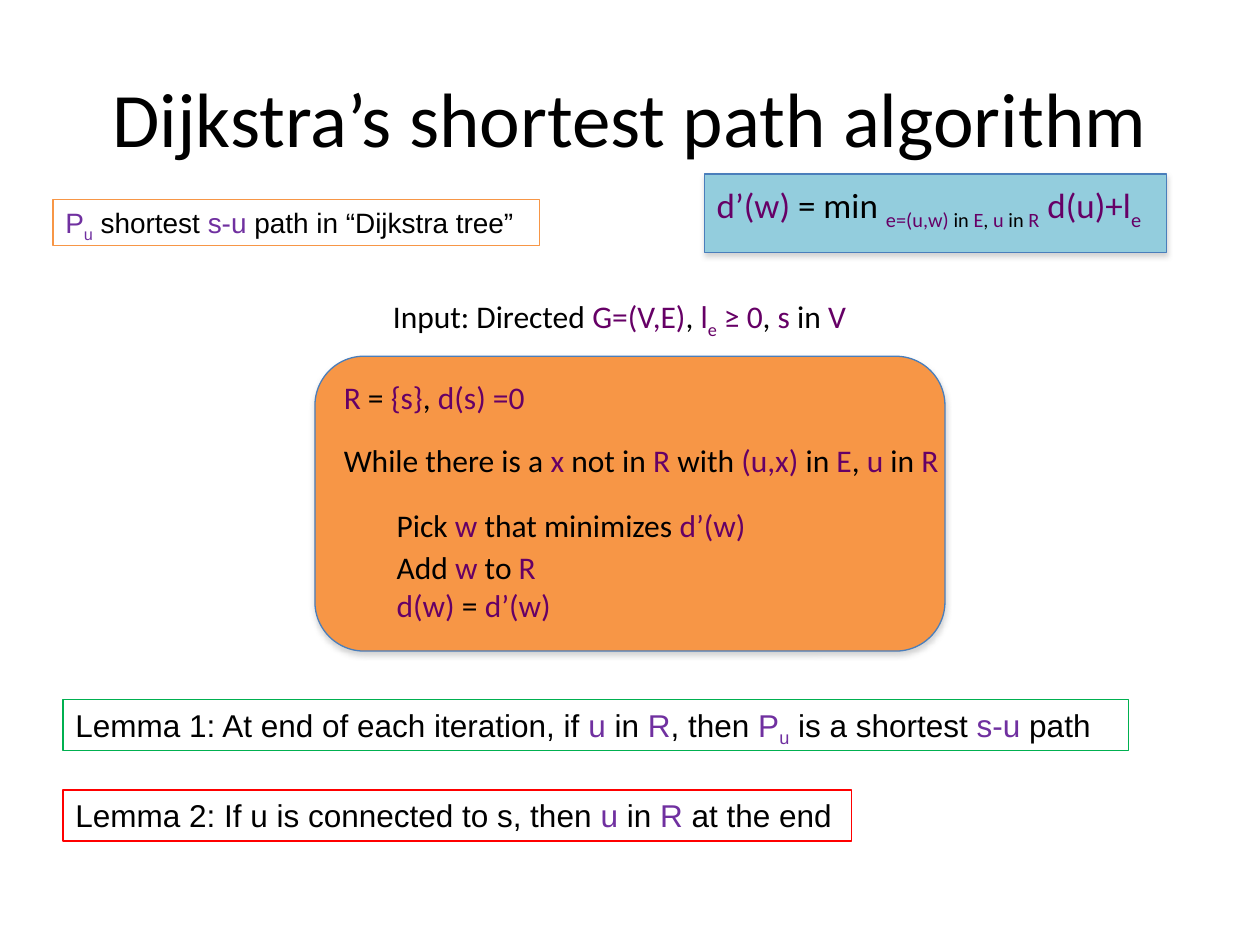
from typing import NamedTuple, Optional

from lxml.etree import SubElement
from pptx import Presentation
from pptx.dml.color import RGBColor
from pptx.enum.shapes import MSO_SHAPE
from pptx.enum.text import MSO_ANCHOR, MSO_AUTO_SIZE, PP_ALIGN
from pptx.oxml.ns import qn
from pptx.util import Inches, Pt

WIDTH, HEIGHT = Inches(10), Inches(7.5)
COLORS = {
    "black": "000000",
    "plum": "660066",
    "violet": "7030A0",
    "orange": "F79646",
    "sky": "93CDDD",
    "blue": "4A7EBB",
    "green": "00B050",
    "red": "FF0000",
    "shadow": "808080",
}
ACCENT_MARK, SUB_MARK = "|", "~"


class Area(NamedTuple):
    left: float
    top: float
    width: float
    height: float

    def emu(self) -> tuple[int, int, int, int]:
        return (
            int(WIDTH * self.left / 100),
            int(HEIGHT * self.top / 100),
            int(WIDTH * self.width / 100),
            int(HEIGHT * self.height / 100),
        )


class Panel(NamedTuple):
    kind: MSO_SHAPE
    area: Area
    fill: str


class Line(NamedTuple):
    area: Area
    text: str
    size: int = 18


class Note(NamedTuple):
    area: Area
    text: str
    border: str
    size: int = 18


PANELS = [
    Panel(MSO_SHAPE.ROUNDED_RECTANGLE, Area(25, 37.7, 50, 31.2), "orange"),
    Panel(MSO_SHAPE.RECTANGLE, Area(55.9, 18.4, 36.7, 8.3), "sky"),
]
LINES = [
    Line(Area(30.2, 30.8, 38.9, 5.4), "Input: Directed |G=(V,E)|, |l~e~ ≥ 0|, |s| in |V|"),
    Line(Area(26.3, 39.3, 16.5, 5.4), "|R| = |{s}|, |d(s) =0|"),
    Line(Area(26.3, 46, 49.8, 5.4), "While there is a |x| not in |R| with |(u,x)| in |E|, |u| in |R|"),
    Line(Area(30.5, 52.9, 30, 5.4), "Pick |w| that minimizes |d’(w)|"),
    Line(Area(30.5, 57.3, 13.2, 5.4), "Add |w| to |R|"),
    Line(Area(30.5, 61.3, 14.3, 5.4), "|d(w)| = |d’(w)|"),
    Line(Area(55.9, 18.8, 38.7, 5.8), "|d’(w)| = min ~|e=(u,w) |in |E|, |u| in |R~ d(u)+l~e~|", 20),
]
NOTES = [
    Note(Area(5, 74, 84.6, 5.4),
         "Lemma 1: At end of each iteration, if |u| in |R|, then |P~u~| is a shortest |s-u| path", "green"),
    Note(Area(4.2, 21.1, 38.6, 4.9), "|P~u~| shortest |s-u| path in “Dijkstra tree”", "orange", 16),
    Note(Area(5, 83.6, 62.6, 5.4),
         "Lemma 2: If u is connected to s, then |u| in |R| at the end", "red"),
]


def rgb(name: str) -> RGBColor:
    return RGBColor.from_string(COLORS[name])


def add_text(s, area: Area, text: str, *, size: int = 18, font: str = "Calibri",
             accent: str = "plum", border: Optional[str] = None, title: bool = False) -> None:
    sp = s.shapes.add_textbox(*area.emu())
    if border:
        sp.line.color.rgb = rgb(border)
        sp.line.width = Pt(0.75)
    tf = sp.text_frame
    tf.word_wrap = title
    tf.auto_size = MSO_AUTO_SIZE.NONE if title else MSO_AUTO_SIZE.SHAPE_TO_FIT_TEXT
    tf.vertical_anchor = MSO_ANCHOR.MIDDLE if title else MSO_ANCHOR.TOP
    p = tf.paragraphs[0]
    p.alignment = PP_ALIGN.CENTER if title else PP_ALIGN.LEFT
    accented = False
    for level, chunk in enumerate(text.split(SUB_MARK)):
        for i, part in enumerate(chunk.split(ACCENT_MARK)):
            if i:
                accented = not accented
            if not part:
                continue
            r = p.add_run()
            r.text = part
            r.font.name = font
            r.font.size = Pt(size)
            r.font.color.rgb = rgb(accent if accented else "black")
            if level % 2:
                r.font._element.set("baseline", "-25000")


def add_panel(s, panel: Panel) -> None:
    sp = s.shapes.add_shape(panel.kind, *panel.area.emu())
    sp.fill.solid()
    sp.fill.fore_color.rgb = rgb(panel.fill)
    sp.line.color.rgb = rgb("blue")
    sp.line.width = Pt(0.75)
    sp.shadow.inherit = False
    effects = sp._element.spPr.find(qn("a:effectLst"))
    shadow = SubElement(effects, qn("a:outerShdw"), blurRad="40000", dist="23000",
                        dir="5400000", rotWithShape="0")
    color = SubElement(shadow, qn("a:srgbClr"), val=COLORS["shadow"])
    SubElement(color, qn("a:alpha"), val="35000")


def main() -> None:
    prs = Presentation()
    prs.slide_width, prs.slide_height = WIDTH, HEIGHT
    s = prs.slides.add_slide(prs.slide_layouts[6])
    for panel in PANELS:
        add_panel(s, panel)
    add_text(s, Area(5, 4, 90, 16.7), "Dijkstra’s shortest path algorithm", size=44, title=True)
    for line in LINES:
        add_text(s, line.area, line.text, size=line.size)
    for note in NOTES:
        add_text(s, note.area, note.text, size=note.size, font="Arial",
                 accent="violet", border=note.border)
    prs.save("out.pptx")


if __name__ == "__main__":
    main()
